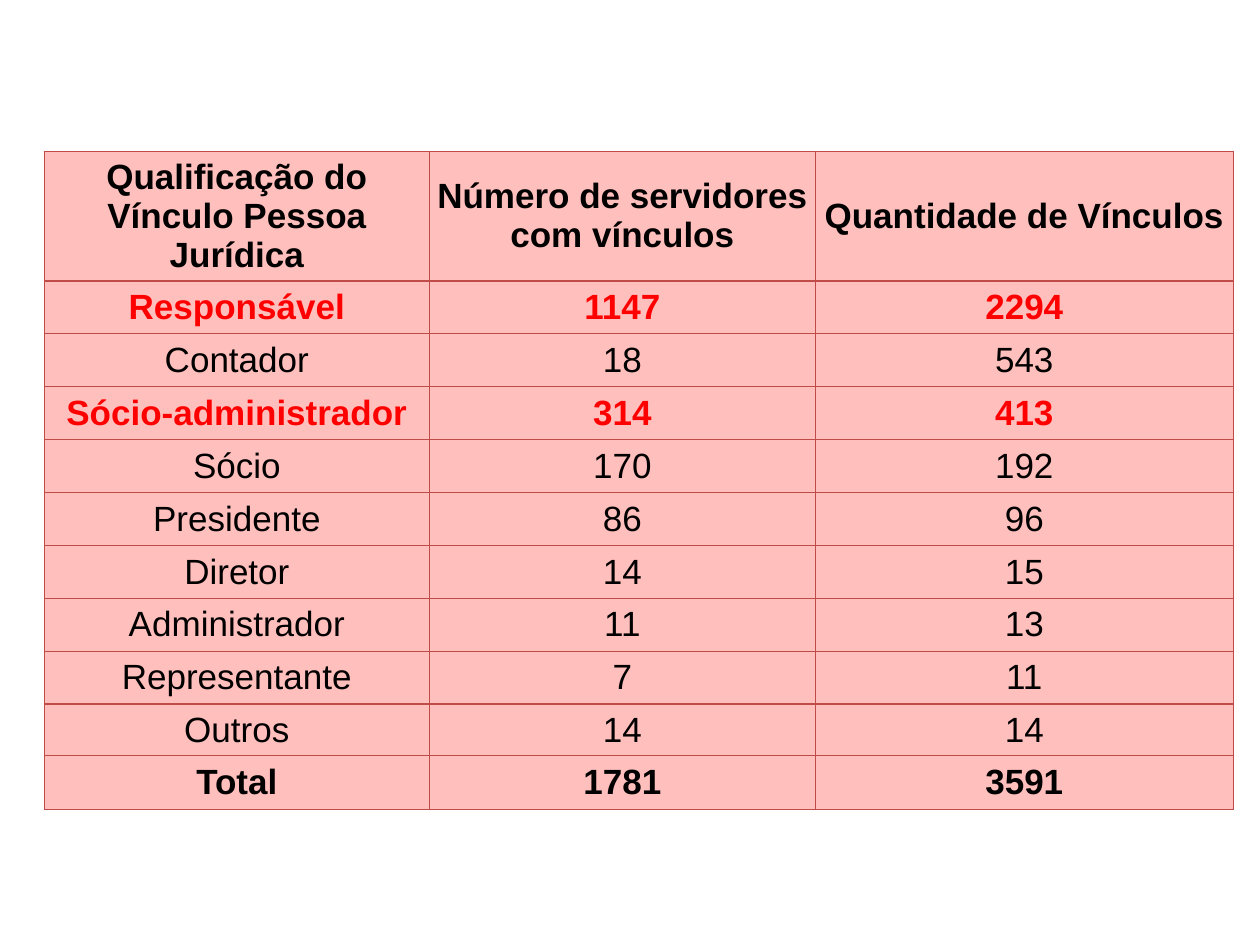
import pptx
import pptx.dml.color
import pptx.enum.text
import pptx.oxml
import pptx.oxml.ns
import pptx.util
from pptx.util import Inches

BLACK, RED = "000000", "FF0000"
CELL_FILL, BORDER = "FFBFBD", "BF4C48"

HEADER = (
    "Qualificação do Vínculo Pessoa Jurídica",
    "Número de servidores com vínculos",
    "Quantidade de Vínculos",
)
QUALIFICATIONS = [
    ("Responsável", 1147, 2294),
    ("Contador", 18, 543),
    ("Sócio-administrador", 314, 413),
    ("Sócio", 170, 192),
    ("Presidente", 86, 96),
    ("Diretor", 14, 15),
    ("Administrador", 11, 13),
    ("Representante", 7, 11),
    ("Outros", 14, 14),
]
TOTAL = ("Total", 1781, 3591)
HIGHLIGHTED = {"Responsável", "Sócio-administrador"}

COLUMN_WIDTHS = [3.06, 3.06, 3.32]
ROW_HEIGHTS = [0.73] + [0.42] * 8 + [0.4, 0.43]


def rgb(hex_color):
    return pptx.dml.color.RGBColor.from_string(hex_color)


def add_borders(cell):
    properties = cell._tc.get_or_add_tcPr()
    for side in ("lnL", "lnR", "lnT", "lnB"):
        properties.append(pptx.oxml.parse_xml(
            f'<a:{side} {pptx.oxml.ns.nsdecls("a")} w="{pptx.util.Pt(0.75)}">'
            f'<a:solidFill><a:srgbClr val="{BORDER}"/></a:solidFill></a:{side}>'
        ))


def format_cell(cell, text, color, bold):
    add_borders(cell)
    cell.fill.solid()
    cell.fill.fore_color.rgb = rgb(CELL_FILL)
    cell.vertical_anchor = pptx.enum.text.MSO_ANCHOR.MIDDLE
    cell.margin_left = cell.margin_right = Inches(0.05)
    cell.margin_top = cell.margin_bottom = Inches(0.05)
    cell.text_frame.text = text
    paragraph = cell.text_frame.paragraphs[0]
    paragraph.alignment = pptx.enum.text.PP_ALIGN.CENTER
    font = paragraph.runs[0].font
    font.name = "Arial"
    font.size = pptx.util.Pt(20)
    font.bold = bold
    font.color.rgb = rgb(color)


def add_links_table(slide):
    rows = [HEADER, *QUALIFICATIONS, TOTAL]
    table = slide.shapes.add_table(
        len(rows), len(HEADER), Inches(0.35), Inches(1.2),
        Inches(sum(COLUMN_WIDTHS)), Inches(sum(ROW_HEIGHTS)),
    ).table
    for column, width in zip(table.columns, COLUMN_WIDTHS):
        column.width = Inches(width)
    for row, height, values in zip(table.rows, ROW_HEIGHTS, rows):
        row.height = Inches(height)
        highlighted = values[0] in HIGHLIGHTED
        bold = highlighted or values in (HEADER, TOTAL)
        for cell, value in zip(row.cells, values):
            format_cell(cell, str(value), RED if highlighted else BLACK, bold)


def main():
    presentation = pptx.Presentation()
    presentation.slide_width = Inches(10)
    presentation.slide_height = Inches(7.5)
    blank_layout = presentation.slide_layouts[6]
    add_links_table(presentation.slides.add_slide(blank_layout))
    presentation.save("out.pptx")


if __name__ == "__main__":
    main()
